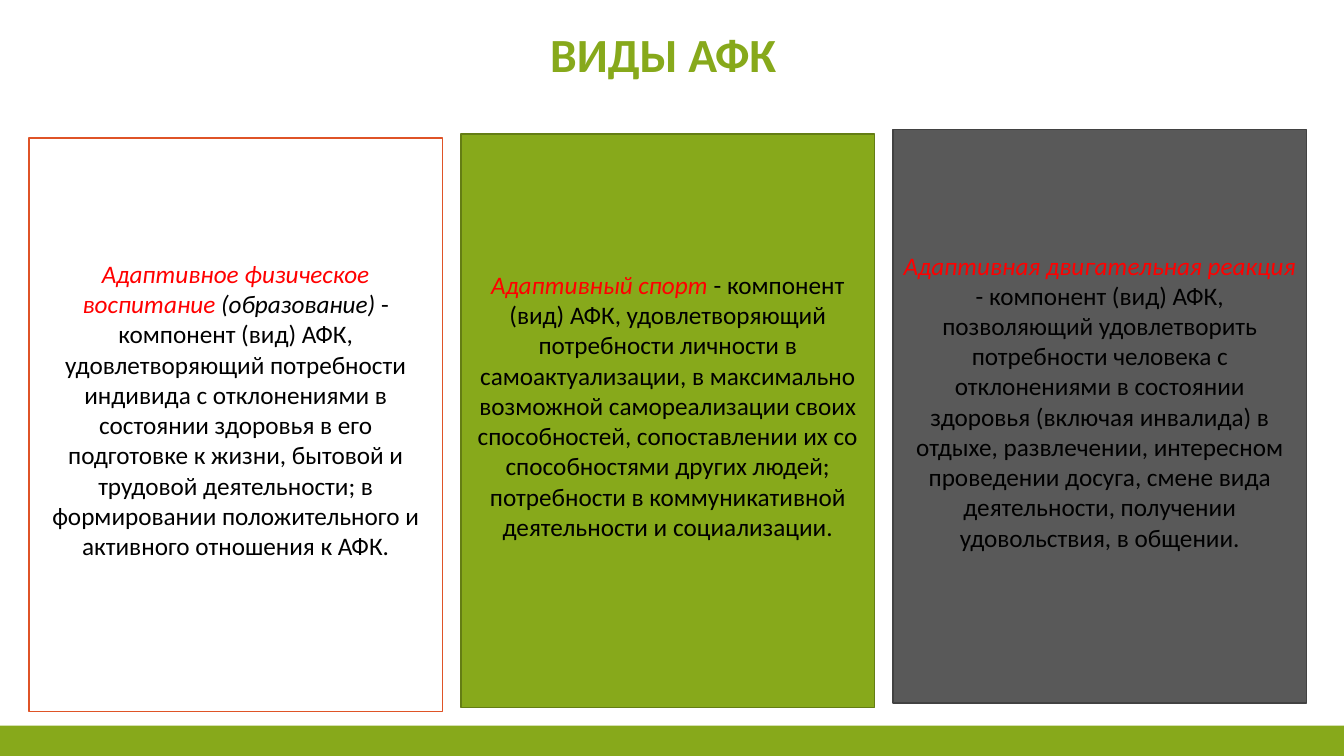
from dataclasses import dataclass

import pptx
import pptx.dml.color
import pptx.enum.shapes
import pptx.enum.text
import pptx.util

Pt = pptx.util.Pt
ALIGN = pptx.enum.text.PP_ALIGN
ANCHOR = pptx.enum.text.MSO_ANCHOR


@dataclass(frozen=True)
class Theme:
    font: str = "Calibri"
    head: int = 34
    body: int = 18
    green: str = "87A91B"
    moss: str = "647D14"
    white: str = "FFFFFF"
    rust: str = "DF5327"
    gray: str = "595959"
    coal: str = "424242"
    red: str = "FF0000"
    black: str = "000000"


THEME = Theme()

CARDS = [
    (THEME.white, THEME.rust, [
        ("Адаптивное физическое воспитание ", THEME.red, True),
        ("(образование)", THEME.black, True),
        (" - компонент (вид) АФК, удовлетворяющий потребности индивида "
         "с отклонениями в состоянии здоровья в его подготовке к жизни, "
         "бытовой и трудовой деятельности; в формировании положительного "
         "и активного отношения к АФК.", THEME.black, False),
    ]),
    (THEME.green, THEME.moss, [
        ("Адаптивный спорт", THEME.red, True),
        (" - компонент (вид) АФК, удовлетворяющий потребности личности "
         "в самоактуализации, в максимально возможной самореализации своих "
         "способностей, сопоставлении их со способностями других людей; "
         "потребности в коммуникативной деятельности и социализации.",
         THEME.black, False),
    ]),
    (THEME.gray, THEME.coal, [
        ("Адаптивная двигательная реакция", THEME.red, True),
        (" - компонент (вид) АФК, позволяющий удовлетворить потребности "
         "человека с отклонениями в состоянии здоровья (включая инвалида) "
         "в отдыхе, развлечении, интересном проведении досуга, смене вида "
         "деятельности, получении удовольствия, в общении.",
         THEME.black, False),
    ]),
]


def color(code):
    return pptx.dml.color.RGBColor.from_string(code)


def add_box(slide, left, top, width, height, fill, line=None):
    box = slide.shapes.add_shape(
        pptx.enum.shapes.MSO_SHAPE.RECTANGLE,
        Pt(left), Pt(top), Pt(width), Pt(height))
    box.shadow.inherit = False
    box.fill.solid()
    box.fill.fore_color.rgb = color(fill)
    if line:
        box.line.color.rgb = color(line)
        box.line.width = Pt(1)
    else:
        box.line.fill.background()
    return box


def set_title(slide, text):
    title = slide.shapes.title
    title.left, title.top = Pt(113.8), Pt(0)
    title.width, title.height = Pt(720), Pt(62.6)
    frame = title.text_frame
    frame.text = text
    frame.vertical_anchor = ANCHOR.BOTTOM
    par = frame.paragraphs[0]
    par.alignment = ALIGN.CENTER
    par.line_spacing = 0.9
    par.font.name = THEME.font
    par.font.size = Pt(THEME.head)
    par.font.bold = True
    par.font.color.rgb = color(THEME.green)


def add_card(slide, left, top, fill, line, parts):
    frame = add_box(slide, left, top, 295.2, 409.7, fill, line).text_frame
    frame.word_wrap = True
    frame.vertical_anchor = ANCHOR.MIDDLE
    frame.margin_bottom = Pt(25.6)
    par = frame.paragraphs[0]
    par.alignment = ALIGN.CENTER
    par.font.name = THEME.font
    par.font.size = Pt(THEME.body)
    for text, tint, slant in parts:
        run = par.add_run()
        run.text = text
        run.font.color.rgb = color(tint)
        run.font.italic = slant


def main():
    deck = pptx.Presentation()
    deck.slide_width, deck.slide_height = Pt(960), Pt(540)
    slide = deck.slides.add_slide(deck.slide_layouts[5])
    add_box(slide, 0, 518.4, 960, 21.6, THEME.green)
    set_title(slide, "ВИДЫ АФК")
    for i, (fill, line, parts) in enumerate(CARDS):
        add_card(slide, 20.8 + 308.6 * i, 98.6 - 3 * i, fill, line, parts)
    deck.save("out.pptx")


if __name__ == "__main__":
    main()
